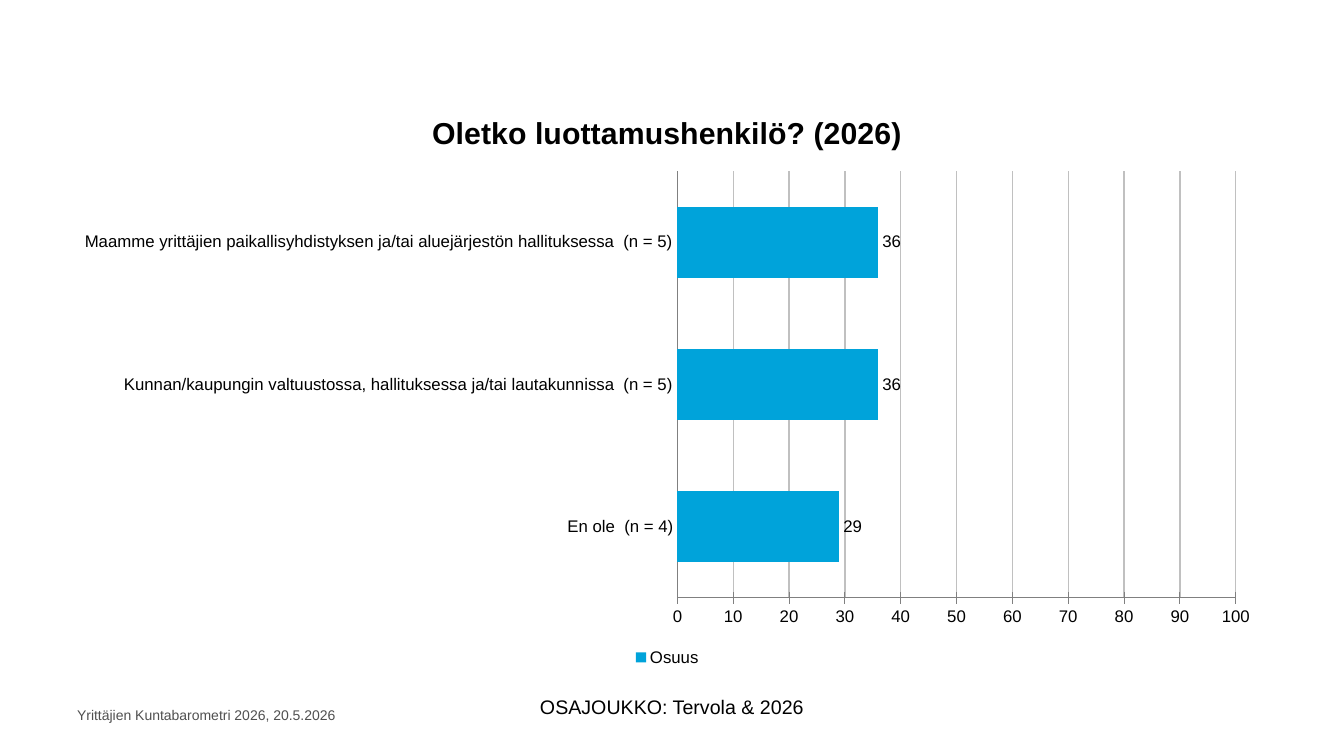
from pptx import Presentation
from pptx.chart.data import CategoryChartData
from pptx.dml.color import RGBColor
from pptx.enum.chart import XL_CHART_TYPE as ChartType, XL_LABEL_POSITION as LabelPos
from pptx.enum.chart import XL_LEGEND_POSITION as LegendPos, XL_TICK_MARK as TickMark
from pptx.enum.text import MSO_ANCHOR as Anchor, PP_ALIGN as Align
from pptx.util import Pt

# Content
QUESTION = "Oletko luottamushenkilö? (2026)"
SERIES_NAME = "Osuus"
ANSWERS = [  # bottom to top
    ("En ole  (n = 4)", 29),
    ("Kunnan/kaupungin valtuustossa, hallituksessa ja/tai lautakunnissa  (n = 5)", 36),
    ("Maamme yrittäjien paikallisyhdistyksen ja/tai aluejärjestön hallituksessa  (n = 5)", 36),
]
SUBSET = "OSAJOUKKO: Tervola & 2026"
SOURCE = "Yrittäjien Kuntabarometri 2026, 20.5.2026"

FONT = "Arial"
BLACK = RGBColor(0x00, 0x00, 0x00)
BLUE = RGBColor(0x00, 0xA3, 0xDA)
GRID_GREY = RGBColor(0xC0, 0xC0, 0xC0)
AXIS_GREY = RGBColor(0x80, 0x80, 0x80)
SOURCE_GREY = RGBColor(0x50, 0x50, 0x50)


def style(font, size, color=BLACK, bold=False):
    font.name, font.size, font.bold = FONT, Pt(size), bold
    font.color.rgb = color


def add_caption(slide, text, box, size, color, align):
    frame = slide.shapes.add_textbox(*map(Pt, box)).text_frame
    frame.word_wrap = True
    frame.vertical_anchor = Anchor.MIDDLE
    frame.text = text
    paragraph = frame.paragraphs[0]
    paragraph.alignment = align
    style(paragraph.runs[0].font, size, color)


prs = Presentation()
prs.slide_width, prs.slide_height = Pt(960), Pt(540)
slide = prs.slides.add_slide(prs.slide_layouts[6])

# Bar chart with its title
answer_data = CategoryChartData(number_format="0")
answer_data.categories = [answer for answer, _ in ANSWERS]
answer_data.add_series(SERIES_NAME, [share for _, share in ANSWERS])
chart = slide.shapes.add_chart(
    ChartType.BAR_CLUSTERED, Pt(43.2), Pt(64.8), Pt(866.9), Pt(414), answer_data
).chart
style(chart.font, 18)
chart.has_title = True
question = chart.chart_title.text_frame
question.text = QUESTION
style(question.paragraphs[0].runs[0].font, 21.6, bold=True)

# Legend
chart.has_legend = True
chart.legend.position = LegendPos.BOTTOM
chart.legend.include_in_layout = False
style(chart.legend.font, 12)

# Axes
answer_axis, share_axis = chart.category_axis, chart.value_axis
for axis, tick in ((answer_axis, TickMark.NONE), (share_axis, TickMark.CROSS)):
    axis.major_tick_mark = tick
    axis.minor_tick_mark = TickMark.NONE
    axis.format.line.color.rgb = AXIS_GREY
    axis.format.line.width = Pt(0.75)
    style(axis.tick_labels.font, 12)
answer_axis.has_major_gridlines = False
share_axis.minimum_scale, share_axis.maximum_scale = 0, 100
share_axis.major_unit = 10
share_axis.has_major_gridlines = True
share_axis.major_gridlines.format.line.color.rgb = GRID_GREY
share_axis.major_gridlines.format.line.width = Pt(1)

# Bars and their values
plot = chart.plots[0]
plot.gap_width = 100
plot.vary_by_categories = False
bars = plot.series[0]
bars.format.fill.solid()
bars.format.fill.fore_color.rgb = BLUE
labels = bars.data_labels
labels.show_value = True
labels.number_format = "0"
labels.number_format_is_linked = False
labels.position = LabelPos.OUTSIDE_END
style(labels.font, 12)

# Captions below the chart
add_caption(slide, SUBSET, (96, 486, 768, 38), 14, BLACK, Align.CENTER)
add_caption(slide, SOURCE, (48, 497, 864, 27), 10, SOURCE_GREY, Align.LEFT)

prs.save("out.pptx")
